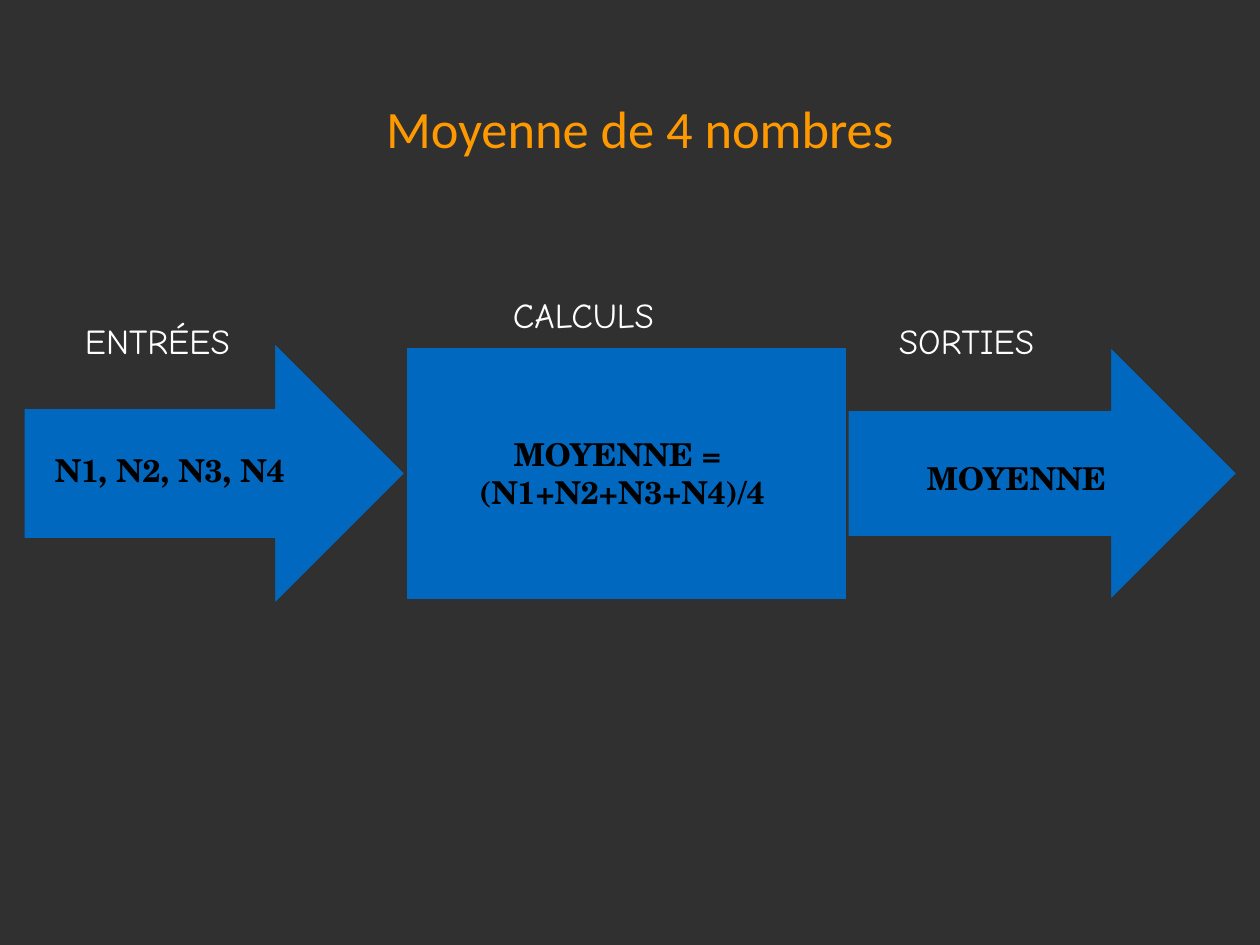
from pptx import Presentation
from pptx.dml.color import RGBColor
from pptx.enum.shapes import MSO_SHAPE
from pptx.enum.text import MSO_ANCHOR, PP_ALIGN
from pptx.util import Pt

PX = 914400 // 126
ARROW, BOX = MSO_SHAPE.RIGHT_ARROW, MSO_SHAPE.RECTANGLE
TOP, MIDDLE = MSO_ANCHOR.TOP, MSO_ANCHOR.MIDDLE
LEFT, CENTER = PP_ALIGN.LEFT, PP_ALIGN.CENTER

BACKGROUND = RGBColor(0x30, 0x30, 0x30)
BLUE = RGBColor(0x00, 0x69, 0xBF)
ORANGE = RGBColor(0xFF, 0x99, 0x00)
WHITE = RGBColor(0xFF, 0xFF, 0xFF)
BLACK = RGBColor(0x00, 0x00, 0x00)

# Font name, size, bold, colour
TITLE_STYLE = ("Calibri", 30, False, ORANGE)
LABEL_STYLE = ("Comic Neue", 20, False, WHITE)
FORMULA_STYLE = ("TeX Gyre Schola", 18, True, BLACK)

# Boxes are left, top, width, height in px
STAGES = [
    (ARROW, (848, 347, 389, 253)),
    (BOX, (406, 347, 441, 253)),
    (ARROW, (24, 343, 381, 261)),
]
TEXTS = [
    (["ENTRÉES"], (72, 307, 253, 39), LABEL_STYLE, LEFT, TOP),
    (["CALCULS"], (500, 281, 253, 39), LABEL_STYLE, LEFT, TOP),
    (["SORTIES"], (886, 307, 253, 39), LABEL_STYLE, LEFT, TOP),
    (["Moyenne de 4 nombres"], (42, 57, 1196, 141), TITLE_STYLE, CENTER, MIDDLE),
    (["N1, N2, N3, N4"], (42, 438, 301, 87), FORMULA_STYLE, LEFT, TOP),
    (["MOYENNE = ", "(N1+N2+N3+N4)/4"], (404, 382, 436, 181), FORMULA_STYLE, CENTER, MIDDLE),
    (["MOYENNE"], (866, 413, 301, 130), FORMULA_STYLE, CENTER, MIDDLE),
]


def to_emu(box):
    return [value * PX for value in box]


def add_stage(slide, kind, box):
    shape = slide.shapes.add_shape(kind, *to_emu(box))
    shape.shadow.inherit = False
    shape.fill.solid()
    shape.fill.fore_color.rgb = BLUE
    shape.line.color.rgb = BACKGROUND
    shape.line.width = Pt(0.75)


def add_text(slide, lines, box, style, alignment, anchor):
    frame = slide.shapes.add_textbox(*to_emu(box)).text_frame
    frame.word_wrap = True
    frame.vertical_anchor = anchor
    frame.margin_left = frame.margin_top = 13 * PX
    frame.margin_right = frame.margin_bottom = 13 * PX
    frame.text = "\n".join(lines)
    name, size, bold, color = style
    for paragraph in frame.paragraphs:
        paragraph.alignment = alignment
        paragraph.font.name = name
        paragraph.font.size = Pt(size)
        paragraph.font.bold = bold
        paragraph.font.color.rgb = color


def main():
    presentation = Presentation()
    presentation.slide_width = 1260 * PX
    presentation.slide_height = 945 * PX
    slide = presentation.slides.add_slide(presentation.slide_layouts[6])
    slide.background.fill.solid()
    slide.background.fill.fore_color.rgb = BACKGROUND
    for stage in STAGES:
        add_stage(slide, *stage)
    for text in TEXTS:
        add_text(slide, *text)
    presentation.save("out.pptx")


if __name__ == "__main__":
    main()
